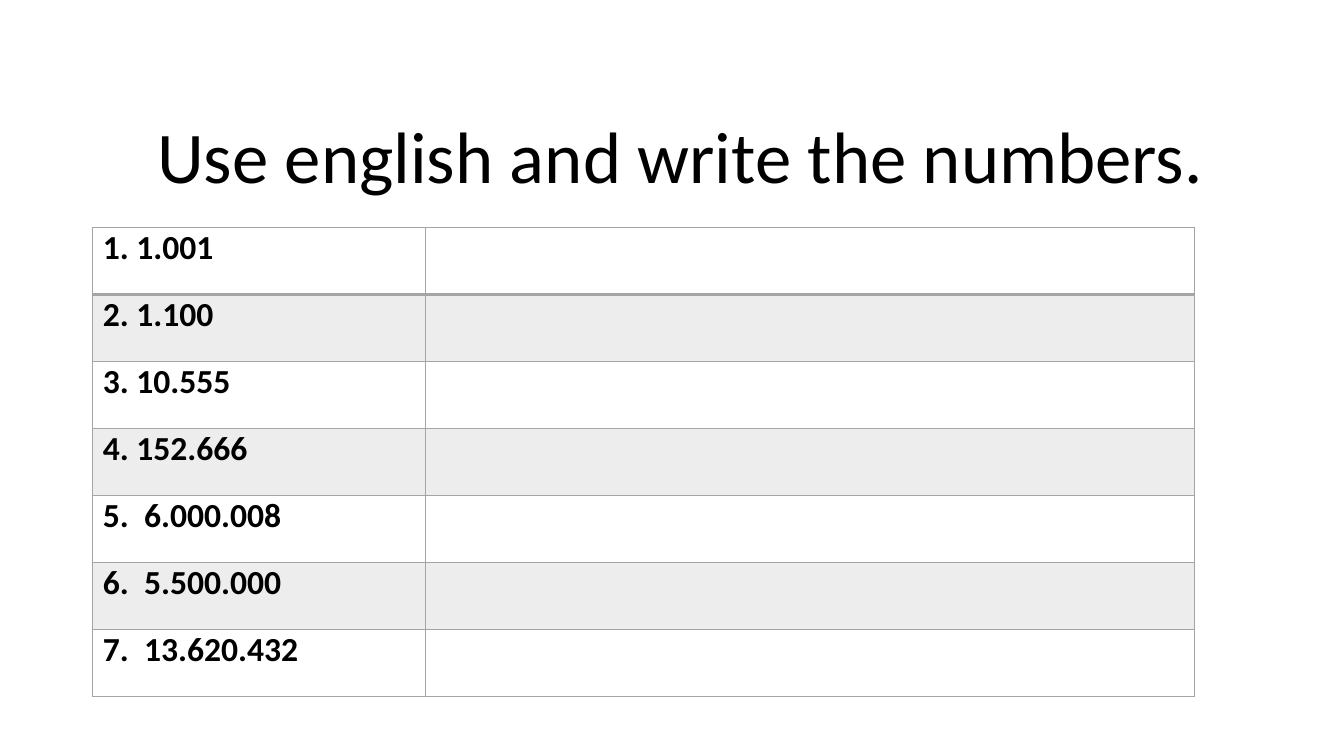
"""Build a worksheet slide for writing numbers in English words."""
from pptx import Presentation, util as u
from pptx.dml.color import RGBColor
from pptx.enum import text
from pptx.oxml import parse_xml
from pptx.oxml.ns import nsdecls

TITLE = " Use english and write the numbers."
NUMBERS = ["1. 1.001", "2. 1.100", "3. 10.555", "4. 152.666",
           "5.  6.000.008", "6.  5.500.000", "7.  13.620.432"]

THEME = {
    "font": "Calibri", "ink": "000000", "rule": "A5A5A5", "band": "EDEDED",
    "title_size": 52, "number_size": 24, "thin": 1, "thick": 2,
}
PAGE = (960, 540)
TITLE_BOX = (66, 44, 828, 102)
TABLE_LEFT, TABLE_TOP = 66, 162.5
COLUMNS = (237.75, 549.25)
ROW_HEIGHT = 47.9


def apply(target, values):
    for name, value in values.items():
        setattr(target, name, value)


def write(frame, words, size, bold=False):
    para = frame.paragraphs[0]
    span = para.add_run()
    span.text = words
    apply(span.font, {"name": THEME["font"], "size": u.Pt(size), "bold": bold})
    span.font.color.rgb = RGBColor.from_string(THEME["ink"])
    return para


def add_borders(cell, widths):
    properties = cell._tc.get_or_add_tcPr()
    for place, (side, width) in enumerate(widths.items()):
        properties.insert(place, parse_xml(
            f'<a:ln{side} {nsdecls("a")} w="{u.Pt(width)}"><a:solidFill>'
            f'<a:srgbClr val="{THEME["rule"]}"/></a:solidFill></a:ln{side}>'))


def add_title(page):
    box = page.shapes.add_textbox(*map(u.Pt, TITLE_BOX))
    apply(box.text_frame, {"word_wrap": True,
                           "vertical_anchor": text.MSO_ANCHOR.BOTTOM})
    para = write(box.text_frame, TITLE, THEME["title_size"])
    apply(para, {"alignment": text.PP_ALIGN.CENTER, "line_spacing": 0.9})


def style_cell(cell, row):
    apply(cell, {"margin_left": u.Pt(7.5), "margin_right": u.Pt(7.5),
                 "margin_top": 0, "margin_bottom": 0})
    if row % 2:
        cell.fill.solid()
        cell.fill.fore_color.rgb = RGBColor.from_string(THEME["band"])
    else:
        cell.fill.background()
    thin, thick = THEME["thin"], THEME["thick"]
    add_borders(cell, {"L": thin, "R": thin,
                       "T": thick if row == 1 else thin,
                       "B": thick if row == 0 else thin})


def add_number_table(page):
    table = page.shapes.add_table(
        len(NUMBERS), len(COLUMNS), u.Pt(TABLE_LEFT), u.Pt(TABLE_TOP),
        u.Pt(sum(COLUMNS)), u.Pt(ROW_HEIGHT * len(NUMBERS))).table
    apply(table, {"first_row": False, "horz_banding": False})
    for column, width in zip(table.columns, COLUMNS):
        column.width = u.Pt(width)
    for row, number in enumerate(NUMBERS):
        table.rows[row].height = u.Pt(ROW_HEIGHT)
        for cell in table.rows[row].cells:
            style_cell(cell, row)
        write(table.cell(row, 0).text_frame, number, THEME["number_size"], True)


def main():
    deck = Presentation()
    apply(deck, {"slide_width": u.Pt(PAGE[0]), "slide_height": u.Pt(PAGE[1])})
    page = deck.slides.add_slide(deck.slide_layouts[6])
    add_title(page)
    add_number_table(page)
    deck.save("out.pptx")


if __name__ == "__main__":
    main()
